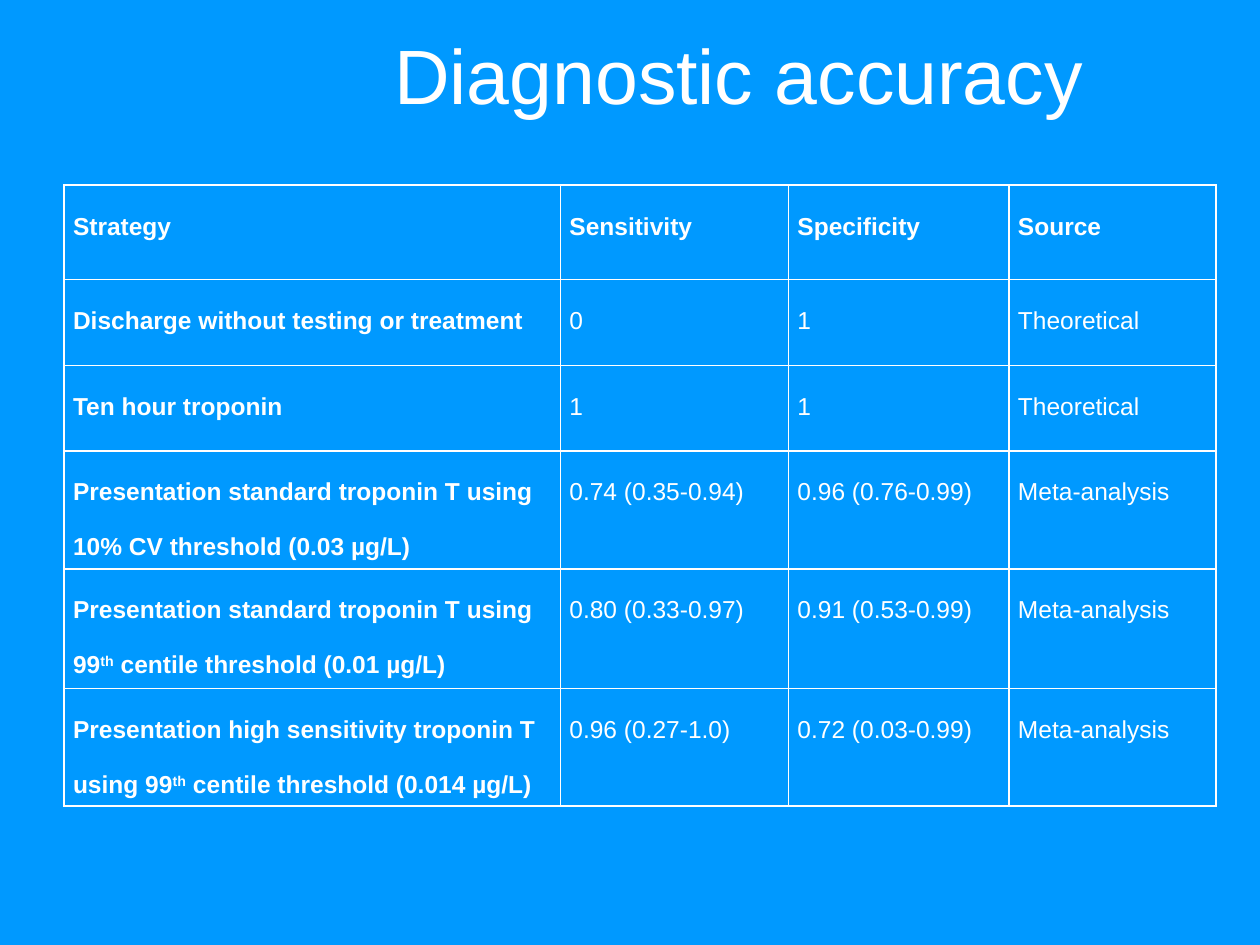
from pptx import Presentation
from pptx.dml.color import RGBColor
from pptx.enum.text import MSO_ANCHOR, PP_ALIGN
from pptx.oxml import parse_xml
from pptx.oxml.ns import nsdecls
from pptx.util import Inches, Pt

BLUE = RGBColor(0x00, 0x99, 0xFF)
WHITE = RGBColor(0xFF, 0xFF, 0xFF)
MIDDLE, TOP = MSO_ANCHOR.MIDDLE, MSO_ANCHOR.TOP
LEFT, JUSTIFY = PP_ALIGN.LEFT, PP_ALIGN.JUSTIFY
FONT = "Arial"

COLUMN_WIDTHS = [3.94, 1.81, 1.75, 1.64]
ROW_HEIGHTS = [0.75, 0.68, 0.68, 0.93, 0.95, 0.93]
ACCURACY = [
    ("Strategy", "Sensitivity", "Specificity", "Source"),
    ("Discharge without testing or treatment", "0", "1", "Theoretical"),
    ("Ten hour troponin", "1", "1", "Theoretical"),
    ("Presentation standard troponin T using 10% CV threshold (0.03 µg/L)",
     "0.74 (0.35-0.94)", "0.96 (0.76-0.99)", "Meta-analysis"),
    ("Presentation standard troponin T using 99^th^ centile threshold (0.01 µg/L)",
     "0.80 (0.33-0.97)", "0.91 (0.53-0.99)", "Meta-analysis"),
    ("Presentation high sensitivity troponin T using 99^th^ centile threshold (0.014 µg/L)",
     "0.96 (0.27-1.0)", "0.72 (0.03-0.99)", "Meta-analysis"),
]


def add_runs(paragraph, text, size, bold=False):
    """Add white runs, raising the parts enclosed in carets."""
    for index, part in enumerate(text.split("^")):
        run = paragraph.add_run()
        run.text = part
        run.font.name = FONT
        run.font.size = Pt(size)
        run.font.bold = bold
        run.font.color.rgb = WHITE
        if index % 2:
            run.font._element.set("baseline", "30000")


def add_title(slide, text):
    """Add the slide heading."""
    heading = slide.shapes.add_textbox(Inches(3.03), Inches(0.21), Inches(6.3), Inches(0.87))
    frame = heading.text_frame
    frame.word_wrap = True
    frame.vertical_anchor = MIDDLE
    paragraph = frame.paragraphs[0]
    paragraph.line_spacing = 0.83
    add_runs(paragraph, text, 44)


def set_borders(cell):
    """Draw a thin white line on every side of a cell."""
    properties = cell._tc.get_or_add_tcPr()
    for index, side in enumerate("LRTB"):
        properties.insert(index, parse_xml(
            f'<a:ln{side} {nsdecls("a")} w="{Pt(1)}"><a:solidFill>'
            f'<a:srgbClr val="{WHITE}"/></a:solidFill></a:ln{side}>'))


def fill_cell(cell, text, bold, alignment):
    """Write and style one table cell."""
    cell.margin_left = cell.margin_right = Inches(0.07)
    cell.margin_top = cell.margin_bottom = 0
    cell.vertical_anchor = TOP
    cell.fill.background()
    set_borders(cell)
    paragraph = cell.text_frame.paragraphs[0]
    paragraph.alignment = alignment
    paragraph.line_spacing = 2.0
    add_runs(paragraph, text, 14, bold)


def add_accuracy_table(slide):
    """Add the table of strategies and their accuracy."""
    table = slide.shapes.add_table(
        len(ROW_HEIGHTS), len(COLUMN_WIDTHS), Inches(0.51), Inches(1.47),
        Inches(sum(COLUMN_WIDTHS)), Inches(sum(ROW_HEIGHTS))).table
    table.horz_banding = False
    table.first_row = False
    for column, width in zip(table.columns, COLUMN_WIDTHS):
        column.width = Inches(width)
    for row, height in zip(table.rows, ROW_HEIGHTS):
        row.height = Inches(height)
    for r, values in enumerate(ACCURACY):
        for c, value in enumerate(values):
            alignment = LEFT if r and c == 0 else JUSTIFY
            fill_cell(table.cell(r, c), value, r == 0 or c == 0, alignment)


def main():
    """Build and save the slide."""
    presentation = Presentation()
    presentation.slide_width = Inches(10)
    presentation.slide_height = Inches(7.5)
    slide = presentation.slides.add_slide(presentation.slide_layouts[6])
    slide.background.fill.solid()
    slide.background.fill.fore_color.rgb = BLUE
    add_title(slide, "Diagnostic accuracy")
    add_accuracy_table(slide)
    presentation.save("out.pptx")


if __name__ == "__main__":
    main()
